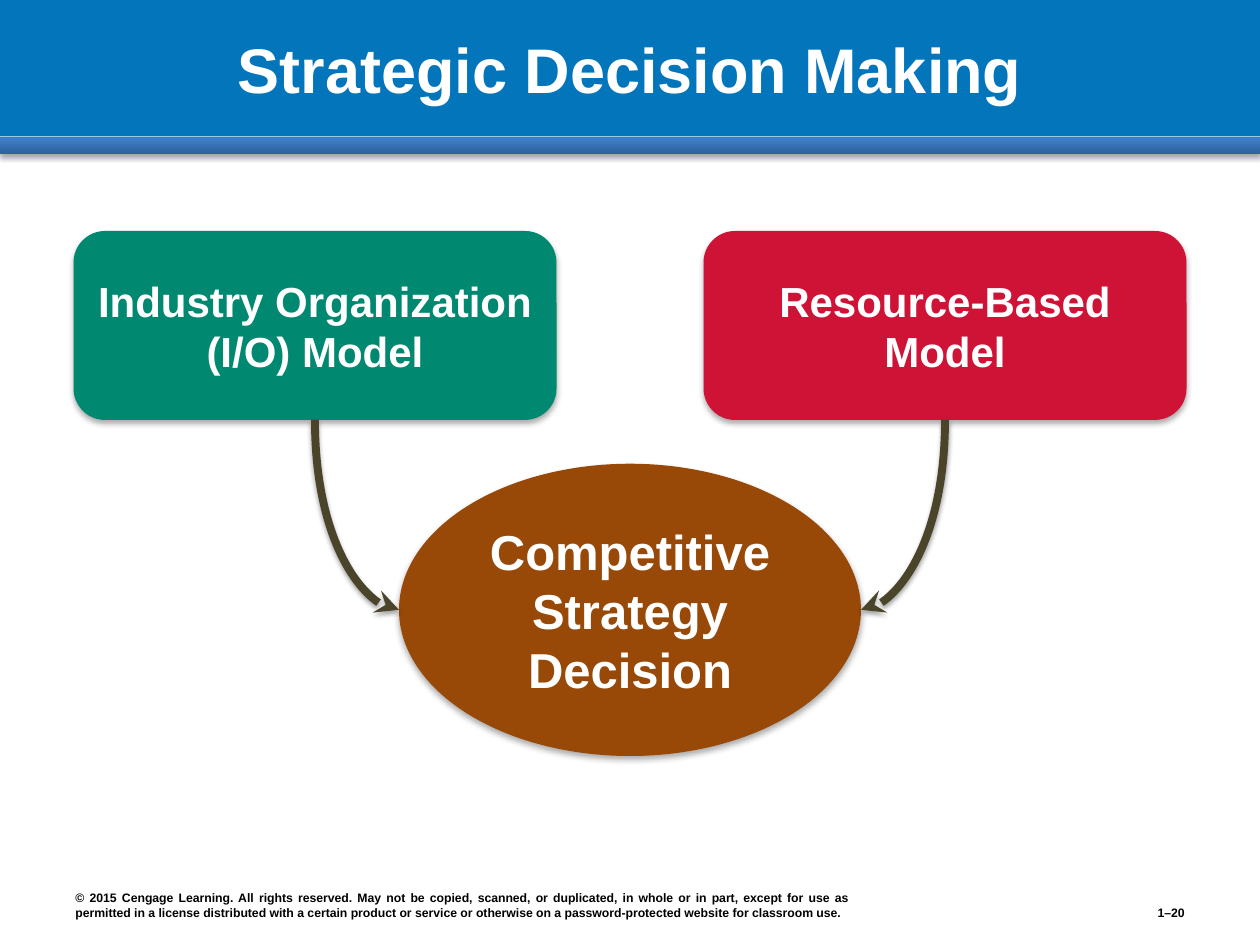
from copy import deepcopy
from dataclasses import dataclass

from lxml import etree
from pptx import Presentation
from pptx.dml.color import RGBColor
from pptx.enum import shapes, text
from pptx.oxml import ns
from pptx.util import Pt

COLORS = {
    "title": "0275BB", "industry": "008870", "resource": "CE1337",
    "decision": "984807", "arrow": "4A452A", "white": "FFFFFF", "black": "000000",
    "strip_dark": "2F5F99", "strip_mid": "3D7CC7", "strip_light": "3A7CCB",
}
FONT = "Arial"
PRESET = shapes.MSO_SHAPE
ALIGN = text.PP_ALIGN
COPYRIGHT = (
    "© 2015 Cengage Learning. All rights reserved. May not be copied, scanned, "
    "or duplicated, in whole or in part, except for use as permitted in a license "
    "distributed with a certain product or service or otherwise on a "
    "password-protected website for classroom use."
)


@dataclass(frozen=True)
class Shadow:
    opacity: int
    blur: float
    distance: float


@dataclass(frozen=True)
class Area:
    left: float
    top: float
    width: float
    height: float

    @property
    def right(self) -> float:
        return self.left + self.width

    @property
    def bottom(self) -> float:
        return self.top + self.height

    @property
    def center_x(self) -> float:
        return self.left + self.width / 2

    @property
    def center_y(self) -> float:
        return self.top + self.height / 2

    def lengths(self) -> list:
        return [Pt(v) for v in (self.left, self.top, self.width, self.height)]


@dataclass(frozen=True)
class Block:
    area: Area
    preset: PRESET
    color: str
    words: str
    size: int
    shadow: Shadow | None = None


@dataclass(frozen=True)
class Footer:
    area: Area
    words: str
    align: ALIGN


BLOCK_SHADOW = Shadow(32, 3.5, 2.2)
ARROW_SHADOW = Shadow(38, 3.1, 1.6)
STRIP_SHADOW = Shadow(35, 3.1, 1.8)

STRIP = Area(0, 78, 720, 10)
TITLE = Block(Area(0, 0, 720, 78), PRESET.RECTANGLE, "title",
              "Strategic Decision Making", 36)
INDUSTRY = Block(Area(42, 132, 276, 108), PRESET.ROUNDED_RECTANGLE, "industry",
                 "Industry Organization (I/O) Model", 24, BLOCK_SHADOW)
RESOURCE = Block(Area(402, 132, 276, 108), PRESET.ROUNDED_RECTANGLE, "resource",
                 "Resource-Based\vModel", 24, BLOCK_SHADOW)
DECISION = Block(Area(228, 265, 264, 167), PRESET.OVAL, "decision",
                 "Competitive Strategy\vDecision", 28, BLOCK_SHADOW)
FOOTERS = [
    Footer(Area(36, 504, 456, 25), COPYRIGHT, ALIGN.JUSTIFY),
    Footer(Area(612, 510, 72, 19), "1–20", ALIGN.RIGHT),
]


def rgb(name: str) -> RGBColor:
    return RGBColor.from_string(COLORS[name])


def add_shadow(shape, shadow: Shadow) -> None:
    """Append a downward outer shadow; fill and line must already be set."""
    props = shape._element.spPr
    for old in props.findall(ns.qn("a:effectLst")):
        props.remove(old)
    effects = etree.SubElement(props, ns.qn("a:effectLst"))
    outer = etree.SubElement(
        effects, ns.qn("a:outerShdw"), blurRad=str(Pt(shadow.blur)),
        dist=str(Pt(shadow.distance)), dir="5400000", rotWithShape="0")
    color = etree.SubElement(outer, ns.qn("a:srgbClr"), val=COLORS["black"])
    etree.SubElement(color, ns.qn("a:alpha"), val=str(shadow.opacity * 1000))


def write(shape, words: str, size: int, color: str, align: ALIGN,
          anchor: text.MSO_ANCHOR) -> None:
    frame = shape.text_frame
    frame.word_wrap = True
    frame.vertical_anchor = anchor
    para = frame.paragraphs[0]
    para.text = words
    para.alignment = align
    para.font.name = FONT
    para.font.size = Pt(size)
    para.font.bold = True
    para.font.color.rgb = rgb(color)


def draw_strip(page) -> None:
    strip = page.shapes.add_shape(PRESET.RECTANGLE, *STRIP.lengths())
    strip.shadow.inherit = False
    strip.line.fill.background()
    strip.fill.gradient()
    strip.fill.gradient_angle = 90
    stop_list = strip._element.spPr.find(".//" + ns.qn("a:gsLst"))
    stop_list.append(deepcopy(stop_list[-1]))
    stops = (("strip_dark", 0), ("strip_mid", 0.8), ("strip_light", 1))
    for stop, (color, position) in zip(strip.fill.gradient_stops, stops):
        stop.color.rgb = rgb(color)
        stop.position = position
    add_shadow(strip, STRIP_SHADOW)


def draw_block(page, block: Block) -> None:
    shape = page.shapes.add_shape(block.preset, *block.area.lengths())
    shape.shadow.inherit = False
    shape.fill.solid()
    shape.fill.fore_color.rgb = rgb(block.color)
    shape.line.fill.background()
    if block.shadow:
        add_shadow(shape, block.shadow)
    write(shape, block.words, block.size, "white", ALIGN.CENTER,
          text.MSO_ANCHOR.MIDDLE)


def draw_footer(page, footer: Footer) -> None:
    box = page.shapes.add_textbox(*footer.area.lengths())
    write(box, footer.words, 7, "black", footer.align, text.MSO_ANCHOR.BOTTOM)


def draw_arrow(page, tip_x: float, model: Area) -> None:
    """Curve from the decision's side, where the head is, up to a model's base."""
    ends = (tip_x, DECISION.area.center_y, model.center_x, model.bottom)
    arrow = page.shapes.add_connector(
        shapes.MSO_CONNECTOR.CURVE, *[Pt(v) for v in ends])
    props = arrow._element.spPr
    props.find(ns.qn("a:prstGeom")).set("prst", "curvedConnector2")
    arrow.line.width = Pt(4.5)
    arrow.line.color.rgb = rgb("arrow")
    etree.SubElement(props.find(ns.qn("a:ln")), ns.qn("a:headEnd"), type="stealth")
    add_shadow(arrow, ARROW_SHADOW)


def main() -> None:
    deck = Presentation()
    deck.slide_width, deck.slide_height = Pt(720), Pt(540)
    page = deck.slides.add_slide(deck.slide_layouts[6])
    draw_strip(page)
    draw_block(page, TITLE)
    for footer in FOOTERS:
        draw_footer(page, footer)
    for block in (INDUSTRY, RESOURCE, DECISION):
        draw_block(page, block)
    draw_arrow(page, DECISION.area.right, RESOURCE.area)
    draw_arrow(page, DECISION.area.left, INDUSTRY.area)
    deck.save("out.pptx")


if __name__ == "__main__":
    main()
